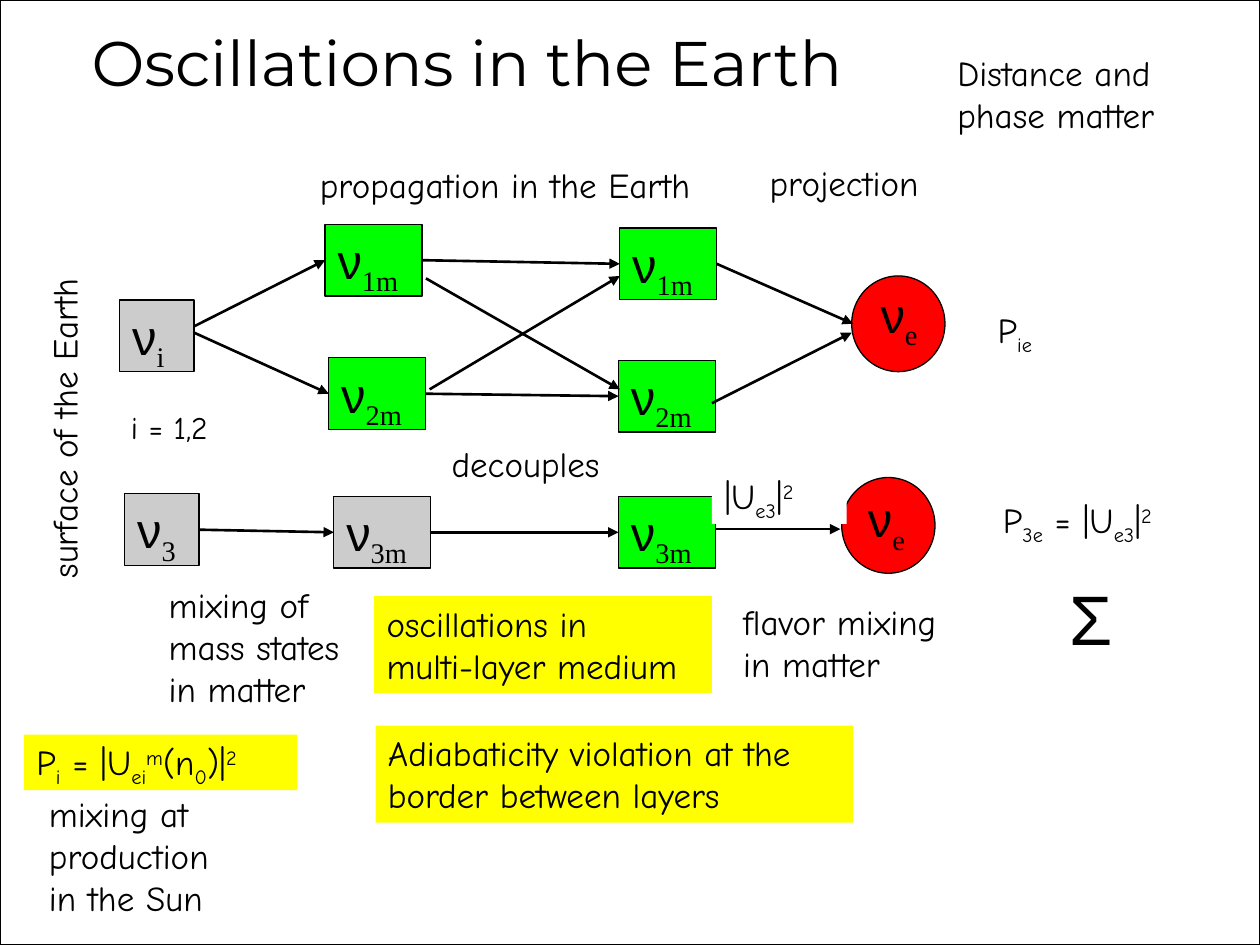
import pptx
import pptx.util
import pptx.dml.color
import pptx.enum.shapes
import pptx.enum.text
import pptx.oxml.ns
import lxml.etree

Pt = pptx.util.Pt
kinds = pptx.enum.shapes.MSO_SHAPE
fits = pptx.enum.text.MSO_AUTO_SIZE
sides = pptx.enum.text.PP_ALIGN
tag = pptx.oxml.ns.qn
rgb = pptx.dml.color.RGBColor.from_string

deck = pptx.Presentation()
deck.slide_width, deck.slide_height = Pt(720), Pt(540)
slide = deck.slides.add_slide(deck.slide_layouts[6])
TOP, LEFT, RIGHT = 0, 1, 3
NOTE, BASE = "Comic Neue", {"_": "-25000", "^": "30000"}


# Box with optional fill, edge and text; a piece led by _ or ^ is a sub- or superscript
def block(at, lines=(), fill=None, edge=False, kind=kinds.RECTANGLE,
          size=20, font=NOTE, low=NOTE, wrap=True):
    at = [Pt(v) for v in at]
    if fill:
        shape = slide.shapes.add_shape(kind, *at)
        shape.shadow.inherit = False
        shape.fill.solid()
        shape.fill.fore_color.rgb = rgb(fill)
        if edge:
            shape.line.color.rgb = rgb("000000")
            shape.line.width = Pt(0.75)
        else:
            shape.line.fill.background()
    else:
        shape = slide.shapes.add_textbox(*at)
    if lines:
        frame = shape.text_frame
        frame.word_wrap = wrap
        frame.auto_size = fits.SHAPE_TO_FIT_TEXT
        frame.vertical_anchor = pptx.enum.text.MSO_ANCHOR.TOP
    for n, line in enumerate(lines):
        para = frame.add_paragraph() if n else frame.paragraphs[0]
        para.alignment = sides.LEFT
        for piece in line:
            mark = BASE.get(piece[0])
            run = para.add_run()
            run.text = piece[1:] if mark else piece
            run.font.size = Pt(size)
            run.font.name = low if mark else font
            run.font.color.rgb = rgb("000000")
            if mark:
                run.font._element.set("baseline", mark)
    return shape


# Arrow between two points, joined to a box side where one is given
def arrow(start, end, tail=None, head=None):
    line = slide.shapes.add_connector(
        pptx.enum.shapes.MSO_CONNECTOR.STRAIGHT, *[Pt(v) for v in start + end])
    line.line.color.rgb = rgb("000000")
    line.line.width = Pt(1.5)
    lxml.etree.SubElement(line.line._get_or_add_ln(), tag("a:tailEnd"), type="triangle")
    lxml.etree.SubElement(line._element.spPr, tag("a:effectLst"))
    if tail:
        line.begin_connect(*tail)
    if head:
        line.end_connect(*head)


# Page frame
block((0, 0, 720, 540), fill="FFFFFF", edge=True)

# Title
title = block((23.8, 10.1, 486, 67), [["Oscillations in the Earth"]],
              size=36, font="Montserrat", wrap=False)
title.text_frame.auto_size = fits.NONE
title.text_frame.paragraphs[0].alignment = sides.CENTER

# Last arrow of the lower row, partly under its box
arrow((386, 302.4), (480.2, 302.4))

# Neutrino states
GREEN, GREY = "00FF00", "CCCCCC"
states = {}
for name, x, y, wide, sub, fill in [
    ("in", 68.4, 171.4, 42.5, "i", GREY),
    ("in3", 71.3, 282.2, 42.5, "3", GREY),
    ("a1", 185.8, 128.2, 55.4, "1m", GREEN),
    ("a2", 187.9, 204.5, 55.4, "2m", GREEN),
    ("a3", 190.8, 283.7, 55.4, "3m", GREY),
    ("b1", 354.2, 130.3, 55.4, "1m", GREEN),
    ("b2", 353.5, 205.9, 55.4, "2m", GREEN),
    ("b3", 353.5, 283.7, 55.4, "3m", GREEN),
]:
    states[name] = block((x, y, wide, 41), [["ν", "_" + sub]], fill, True,
                         size=28, font="Arial", low="Times New Roman")

# Detected electron neutrinos
for x, y, left, top in [(486.7, 157.7, 496.1, 159.1), (481, 272.9, 488.9, 275.8)]:
    block((x, y, 53.3, 54.7), fill="FF0000", edge=True, kind=kinds.OVAL)
    block((left, top, 41, 41), [["ν", "_e"]],
          size=28, font="Arial", low="Times New Roman")

# Arrows between the states
for start, end, tail, head in [
    ((110.9, 186.5), (185.8, 151.2), None, "a1"),
    ((110.9, 190.1), (187.2, 226.1), None, "a2"),
    ((242.6, 151.2), (354.2, 150.5), "a1", "b1"),
    ((245.5, 226.1), (353.5, 226.1), "a2", "b2"),
    ((245.5, 222.5), (354.2, 157.7), None, None),
    ((243.4, 159.1), (354.2, 222.5), None, None),
    ((411.8, 151.2), (487.4, 185), "b1", None),
    ((406.8, 230.4), (486.7, 190.1), None, None),
    ((114.5, 305.3), (190.8, 305.3), "in3", "a3"),
    ((244.1, 306.7), (352.8, 306.7), "a3", "b3"),
]:
    arrow(start, end, tail and (states[tail], RIGHT), head and (states[head], LEFT))

# Formulas
for at, line, fill in [
    ((406.8, 267.8, 77, 31.7), ["|U", "_e3", "|", "^2"], "FFFFFF"),
    ((563, 172.8, 38.9, 31.7), ["P", "_ie"], "FFFFFF"),
    ((566, 281.5, 119.4, 31.7), ["P", "_3e", " = |U", "_e3", "|", "^2"], "FFFFFF"),
    ((13.7, 419.8, 156.2, 31.7),
     ["P", "_i", " = |U", "_ei", "^m", "(n", "_0", ")|", "^2"], "FFFF00"),
]:
    block(at, [line], fill)
block((604.1, 325.4, 36, 55.4), [["Σ"]], size=40, font="Arial")
block((67.7, 229.7, 71.3, 28.8), [["i = 1,2"]], size=18)

# Labels and remarks
for at, lines, fill in [
    ((175.7, 90, 253.4, 31.7), [["propagation in the Earth"]], None),
    ((432.7, 88.6, 114.5, 31.7), [["projection"]], None),
    ((540, 25.9, 168.5, 55.4), [["Distance and phase matter"]], None),
    ((251, 249.1, 126.3, 31.7), [["decouples"]], None),
    ((89.3, 329.8, 136.8, 79.9), [["mixing of mass states"], ["in matter"]], None),
    ((417.6, 339.8, 136.8, 55.4), [["flavor mixing"], ["in matter"]], None),
    ((20.9, 449.3, 118.8, 79.9), [["mixing at"], ["production"], ["in the Sun"]], None),
    ((213.8, 340.6, 193, 55.4), [["oscillations in"], ["multi-layer medium"]], "FFFF00"),
    ((214.6, 414.7, 272.9, 55.4),
     [["Adiabaticity violation at the border between layers"]], "FFFF00"),
]:
    block(at, lines, fill)
block((-71.3, 213.8, 216, 31.7), [["surface of the Earth"]]).rotation = 270

deck.save("out.pptx")
